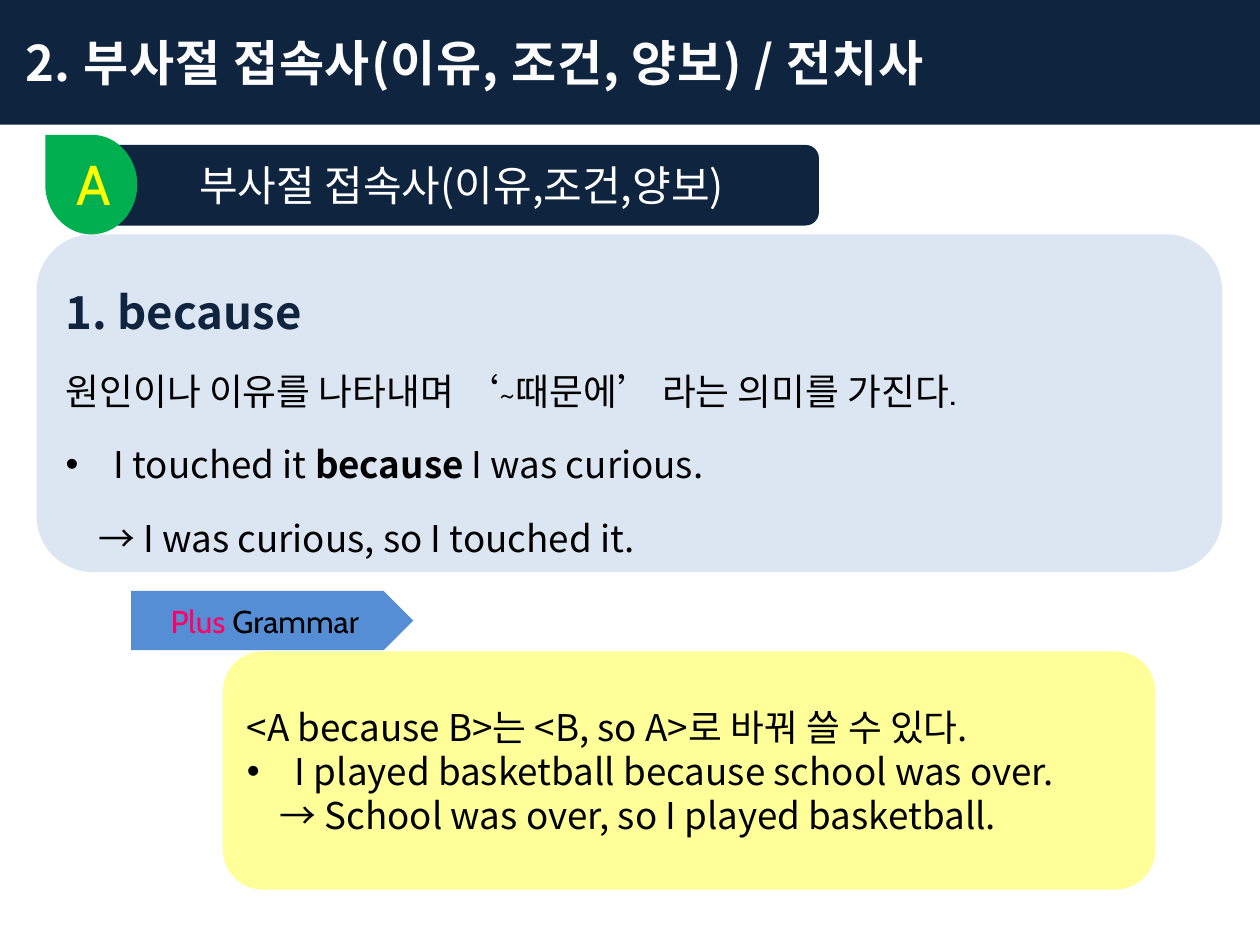
from dataclasses import dataclass

from lxml import etree
from pptx import Presentation
from pptx.dml.color import RGBColor
from pptx.enum.shapes import MSO_SHAPE
from pptx.enum.text import MSO_ANCHOR, MSO_AUTO_SIZE, PP_ALIGN
from pptx.oxml.ns import qn
from pptx.util import Inches, Pt

ROUND = MSO_SHAPE.FLOWCHART_ALTERNATE_PROCESS
ARROW, DROP = MSO_SHAPE.PENTAGON, MSO_SHAPE.TEAR
TOP, MIDDLE = MSO_ANCHOR.TOP, MSO_ANCHOR.MIDDLE
LEFT, CENTER, JUSTIFY = PP_ALIGN.LEFT, PP_ALIGN.CENTER, PP_ALIGN.JUSTIFY
FIXED = MSO_AUTO_SIZE.NONE


@dataclass(frozen=True)
class Theme:
    sans: str = "Noto Sans CJK KR"
    latin: str = "Cabin"
    navy: str = "0F243E"
    pale: str = "DCE6F2"
    green: str = "00B050"
    lemon: str = "FFFF99"
    blue: str = "558ED5"
    white: str = "FFFFFF"
    snow: str = "FCFCFD"
    black: str = "000000"
    yellow: str = "FFFF00"
    pink: str = "FF0066"
    title: int = 28
    head: int = 26
    label: int = 24
    body: int = 21
    tag: int = 18
    letter: int = 32


T = Theme()


def paint(shape, color):
    shape.fill.solid()
    shape.fill.fore_color.rgb = RGBColor.from_string(color)


def add_box(slide, kind, box, color):
    shape = slide.shapes.add_shape(kind, *map(Inches, box))
    shape.shadow.inherit = False
    paint(shape, color)
    shape.line.fill.background()
    return shape


def set_frame(shape, anchor=MIDDLE, wrap=True):
    frame = shape.text_frame
    frame.word_wrap = wrap
    frame.auto_size = FIXED
    frame.vertical_anchor = anchor
    return frame


def add_run(para, text, size=T.body, color=T.black, font=T.sans, bold=False, track=None):
    run = para.add_run()
    run.text = text
    run.font.size = Pt(size)
    run.font.bold = bold
    run.font.name = font
    run.font.color.rgb = RGBColor.from_string(color)
    props = run.font._element
    etree.SubElement(props, qn("a:ea"), typeface=T.sans)
    if track:
        props.set("spc", str(int(track * 100)))


def add_para(frame, first=False, align=LEFT, lines=None, indent=0, bullet=False):
    para = frame.paragraphs[0] if first else frame.add_paragraph()
    para.alignment = align
    if lines:
        para.line_spacing = lines
    if first:
        para.space_before = Pt(0)
    props = para._p.get_or_add_pPr()
    hang = 0.38 if bullet else 0
    props.set("marL", str(Inches(indent + hang)))
    props.set("indent", str(Inches(-hang)))
    if bullet:
        etree.SubElement(props, qn("a:buFont"), typeface="Arial")
        etree.SubElement(props, qn("a:buChar"), char="•")
    else:
        etree.SubElement(props, qn("a:buNone"))
    return para


def place(shape, box):
    shape.left, shape.top, shape.width, shape.height = map(Inches, box)


def header(slide, box):
    title = slide.shapes.title
    place(title, box)
    paint(title, T.navy)
    frame = set_frame(title)
    frame.margin_left = Inches(0.2)
    add_run(add_para(frame, first=True), "2. 부사절 접속사(이유, 조건, 양보) / 전치사",
            size=T.title, color=T.snow, bold=True, track=0.5)


def lesson(slide, box):
    """Turn the body placeholder into the rounded panel with the rule."""
    body = slide.placeholders[1]
    place(body, box)
    geom = etree.SubElement(body._element.spPr, qn("a:prstGeom"),
                            prst="flowChartAlternateProcess")
    etree.SubElement(geom, qn("a:avLst"))
    paint(body, T.pale)
    frame = set_frame(body, anchor=TOP)
    style = {"align": JUSTIFY, "lines": 1.5}
    add_run(add_para(frame, first=True, **style), "1. because",
            size=T.head, color=T.navy, bold=True)
    add_run(add_para(frame, **style),
            "원인이나 이유를 나타내며 ‘~때문에’ 라는 의미를 가진다.", font=T.latin)
    line = add_para(frame, bullet=True, **style)
    add_run(line, "I touched it ")
    add_run(line, "because", bold=True)
    add_run(line, " I was curious.")
    add_run(add_para(frame, indent=0.26, **style), "→ I was curious, so I touched it.")


def section(slide, box):
    """Draw the section label with its lettered drop at the left end."""
    left, top, wide, high = box
    bar = add_box(slide, ROUND, (left, top, wide, high), T.navy)
    add_run(add_para(set_frame(bar), first=True, align=CENTER),
            "부사절 접속사(이유,조건,양보)", size=T.label, color=T.white)
    drop = add_box(slide, DROP, (left - 0.5, top - 0.05, 0.79, 0.73), T.green)
    drop.rotation = 270
    mark = slide.shapes.add_textbox(*map(Inches, (left - 0.32, top - 0.01, 0.47, high)))
    add_run(add_para(set_frame(mark, anchor=TOP, wrap=False), first=True), "A",
            size=T.letter, color=T.yellow, font=T.latin)


def note(slide, box):
    panel = add_box(slide, ROUND, box, T.lemon)
    frame = set_frame(panel)
    add_run(add_para(frame, first=True), "<A because B>는 <B, so A>로 바꿔 쓸 수 있다.")
    add_run(add_para(frame, bullet=True), "I played basketball because school was over.")
    add_run(add_para(frame, indent=0.26), "→ School was over, so I played basketball.")


def tag(slide, box):
    arrow = add_box(slide, ARROW, box, T.blue)
    line = add_para(set_frame(arrow), first=True, align=CENTER)
    for text, color in (("Plus ", T.pink), ("Grammar", T.black)):
        add_run(line, text, size=T.tag, color=color, font=T.latin)


def main():
    deck = Presentation()
    deck.slide_width, deck.slide_height = Inches(10), Inches(7.5)
    slide = deck.slides.add_slide(deck.slide_layouts[1])
    header(slide, (0, 0, 10, 0.99))
    lesson(slide, (0.29, 1.86, 9.41, 2.68))
    section(slide, (0.83, 1.15, 5.67, 0.64))
    note(slide, (1.77, 5.17, 7.4, 1.89))
    tag(slide, (1.04, 4.69, 2.24, 0.47))
    deck.save("out.pptx")


if __name__ == "__main__":
    main()
